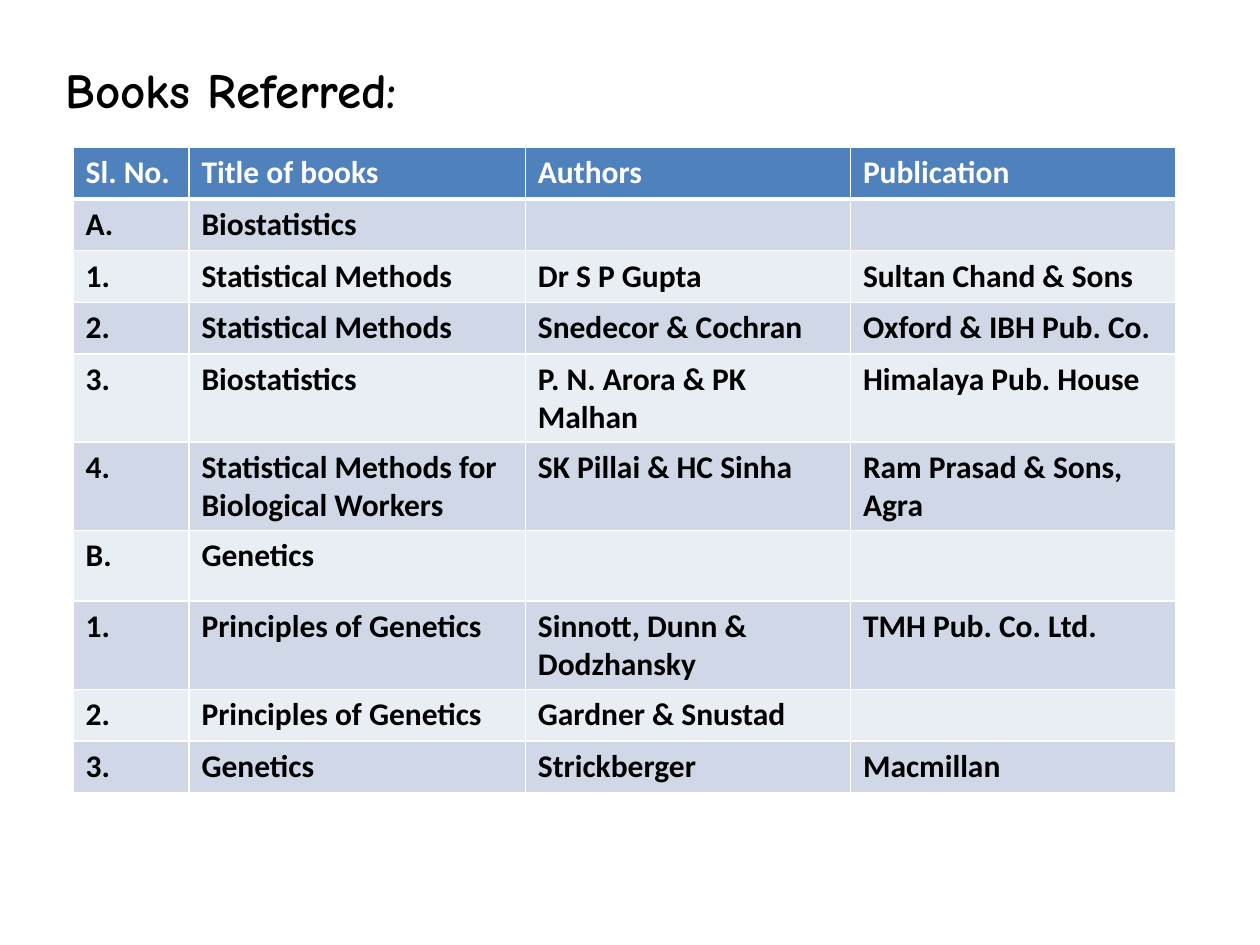
from lxml.etree import SubElement
from pptx import Presentation
from pptx.dml.color import RGBColor
from pptx.oxml.ns import qn
from pptx.util import Inches, Pt

COLORS = {
    "header": "4F81BD",
    "dark_band": "D0D8E8",
    "light_band": "E9EDF4",
    "white": "FFFFFF",
    "black": "000000",
}
TITLE_FORMAT = {"name": "Comic Neue", "size": Pt(28), "bold": True}
CELL_FORMAT = {"name": "Calibri", "size": Pt(18), "bold": True}

COLUMN_WIDTHS = [0.92, 2.67, 2.58, 2.58]
ROW_HEIGHT = 0.41
GENETICS_ROW = 6
GENETICS_ROW_HEIGHT = 0.56
BOOKS = [
    ("Sl. No.", "Title of books", "Authors", "Publication"),
    ("A.", "Biostatistics", "", ""),
    ("1.", "Statistical Methods", "Dr S P Gupta", "Sultan Chand & Sons"),
    ("2.", "Statistical Methods", "Snedecor & Cochran", "Oxford & IBH Pub. Co."),
    ("3.", "Biostatistics", "P. N. Arora & PK Malhan", "Himalaya Pub. House"),
    ("4.", "Statistical Methods for Biological Workers", "SK Pillai & HC Sinha",
     "Ram Prasad & Sons, Agra"),
    ("B.", "Genetics", "", ""),
    ("1.", "Principles of Genetics", "Sinnott, Dunn & Dodzhansky", "TMH Pub. Co. Ltd."),
    ("2.", "Principles of Genetics", "Gardner & Snustad", ""),
    ("3.", "Genetics", "Strickberger", "Macmillan"),
]


def color(name):
    return RGBColor.from_string(COLORS[name])


def add_run(paragraph, text, text_format, color_name):
    run = paragraph.add_run()
    run.text = text
    for attribute, value in text_format.items():
        setattr(run.font, attribute, value)
    run.font.color.rgb = color(color_name)


def add_title(slide, text):
    shape = slide.shapes.add_textbox(Inches(0.42), Inches(0.42), Inches(9), Inches(0.6))
    shape.text_frame.word_wrap = True
    add_run(shape.text_frame.paragraphs[0], text, TITLE_FORMAT, "black")


def set_borders(cell, widths):
    """Draw white borders; widths maps each side's tag to points."""
    properties = cell._tc.get_or_add_tcPr()
    for tag, width in widths.items():
        line = SubElement(properties, qn(f"a:{tag}"), w=str(Pt(width)))
        fill = SubElement(line, qn("a:solidFill"))
        SubElement(fill, qn("a:srgbClr"), val=COLORS["white"])


def format_cell(cell, text, row_index):
    is_header = row_index == 0
    band = "dark_band" if row_index % 2 else "light_band"
    set_borders(cell, {
        "lnL": 1,
        "lnR": 1,
        "lnT": 3 if row_index == 1 else 1,
        "lnB": 3 if is_header else 1,
    })
    cell.fill.solid()
    cell.fill.fore_color.rgb = color("header" if is_header else band)
    if text:
        add_run(cell.text_frame.paragraphs[0], text, CELL_FORMAT,
                "white" if is_header else "black")


def add_book_table(slide):
    heights = [ROW_HEIGHT] * len(BOOKS)
    heights[GENETICS_ROW] = GENETICS_ROW_HEIGHT
    table = slide.shapes.add_table(
        len(BOOKS), len(COLUMN_WIDTHS), Inches(0.58), Inches(1.17),
        Inches(sum(COLUMN_WIDTHS)), Inches(sum(heights))).table
    for column, width in zip(table.columns, COLUMN_WIDTHS):
        column.width = Inches(width)
    for row_index, (row, height, texts) in enumerate(zip(table.rows, heights, BOOKS)):
        row.height = Inches(height)
        for cell, text in zip(row.cells, texts):
            format_cell(cell, text, row_index)


def main():
    presentation = Presentation()
    presentation.slide_width = Inches(10)
    presentation.slide_height = Inches(7.5)
    slide = presentation.slides.add_slide(presentation.slide_layouts[6])
    add_title(slide, "Books Referred:")
    add_book_table(slide)
    presentation.save("out.pptx")


if __name__ == "__main__":
    main()
